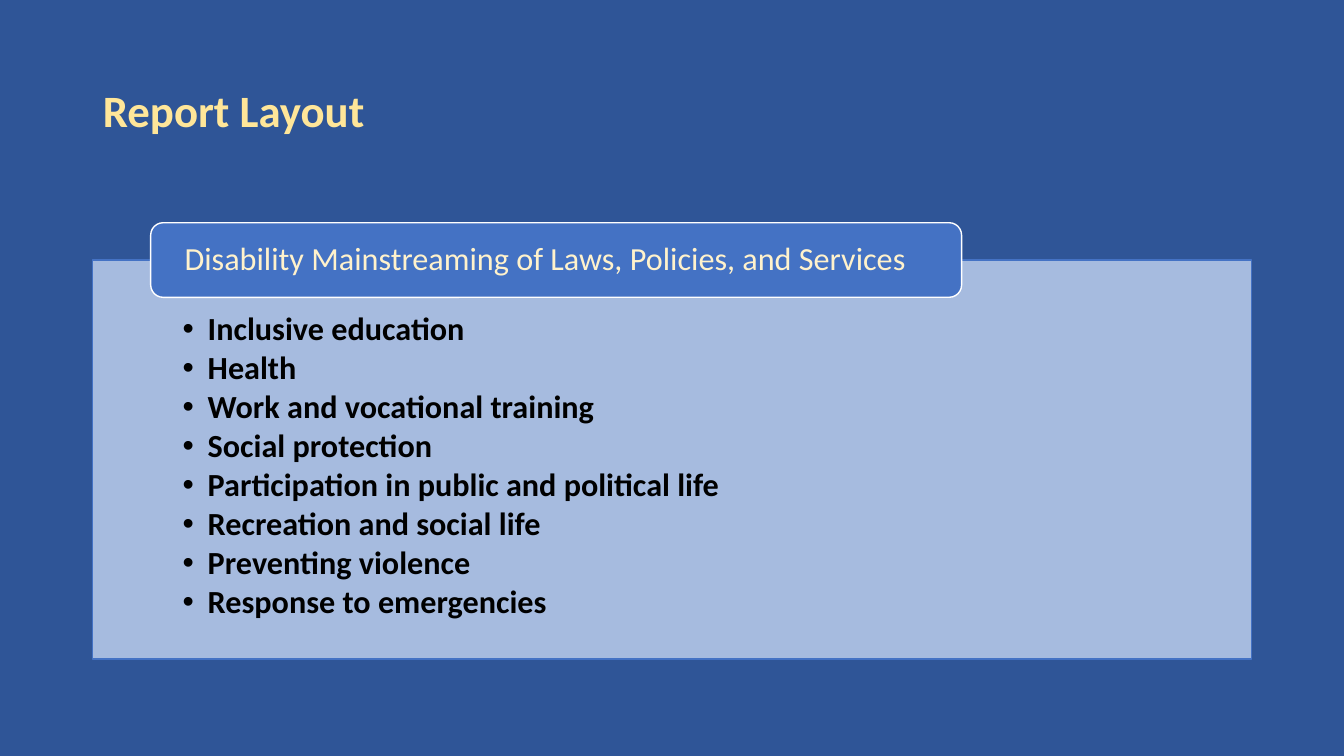
from lxml.etree import SubElement
from pptx import Presentation
from pptx.dml.color import RGBColor
from pptx.enum.shapes import MSO_SHAPE as Shape
from pptx.enum.text import MSO_ANCHOR as Anchor, MSO_AUTO_SIZE as AutoSize, PP_ALIGN as Align
from pptx.oxml.ns import qn
from pptx.util import Inches, Pt

NAVY = RGBColor(0x2F, 0x55, 0x97)
BLUE = RGBColor(0x44, 0x72, 0xC4)
PALE_BLUE = RGBColor(0xB4, 0xC7, 0xE7)
GOLD = RGBColor(0xFF, 0xE6, 0x99)
CREAM = RGBColor(0xFF, 0xF2, 0xCC)
WHITE = RGBColor(0xFF, 0xFF, 0xFF)
BLACK = RGBColor(0, 0, 0)

FONT = "Calibri"
WIDTH, HEIGHT = 13.33, 7.5
MARGIN = 0.92
CONTENT_WIDTH = WIDTH - 2 * MARGIN
PANEL_TOP, PANEL_HEIGHT = 2.58, 3.96
HEADING_HEIGHT = 0.74

HEADING = "Disability Mainstreaming of Laws, Policies, and Services"
TOPICS = [
    "Inclusive education",
    "Health",
    "Work and vocational training",
    "Social protection",
    "Participation in public and political life",
    "Recreation and social life",
    "Preventing violence",
    "Response to emergencies",
]


def place(shape, left, top, width, height):
    shape.left, shape.top = Inches(left), Inches(top)
    shape.width, shape.height = Inches(width), Inches(height)


def add_box(page, kind, area, fill, line, opacity=100):
    box = page.shapes.add_shape(kind, *map(Inches, area))
    box.shadow.inherit = False
    box.fill.solid()
    box.fill.fore_color.rgb = fill
    box.line.color.rgb = line
    box.line.width = Pt(1)
    if opacity < 100:
        color = box.fill._xPr.find(".//" + qn("a:srgbClr"))
        SubElement(color, qn("a:alpha"), val=str(opacity * 1000))
    return box


def set_frame(frame, anchor, left, top, right, bottom):
    frame.word_wrap = True
    frame.auto_size = AutoSize.NONE
    frame.vertical_anchor = anchor
    frame.margin_left, frame.margin_top = Inches(left), Inches(top)
    frame.margin_right, frame.margin_bottom = Inches(right), Inches(bottom)


def write(para, text, size, color, bold=False):
    para.alignment = Align.LEFT
    para.line_spacing = 0.9
    span = para.add_run()
    span.text = text
    span.font.name = FONT
    span.font.size = Pt(size)
    span.font.bold = bold
    span.font.color.rgb = color


def add_bullet(para, indent):
    para.space_after = Pt(3.1)
    props = para._p.get_or_add_pPr()
    props.set("marL", str(Inches(indent)))
    props.set("indent", str(-Inches(indent)))
    SubElement(props, qn("a:buFont"), typeface="Arial")
    SubElement(props, qn("a:buChar"), char="•")


def add_title(page, text):
    title = page.shapes.title
    place(title, MARGIN, 0.4, CONTENT_WIDTH, 1.45)
    set_frame(title.text_frame, Anchor.MIDDLE, 0.1, 0.05, 0.1, 0.05)
    write(title.text_frame.paragraphs[0], text, 32, GOLD, bold=True)


def add_topic_panel(page, topics):
    area = (MARGIN, PANEL_TOP, CONTENT_WIDTH, PANEL_HEIGHT)
    panel = add_box(page, Shape.RECTANGLE, area, PALE_BLUE, BLUE, opacity=90)
    frame = panel.text_frame
    set_frame(frame, Anchor.TOP, 0.89, 0.52, 0.89, 0.18)
    for index, topic in enumerate(topics):
        para = frame.add_paragraph() if index else frame.paragraphs[0]
        write(para, topic, 23, BLACK, bold=True)
        add_bullet(para, 0.25)


def add_heading(page, text):
    # The heading straddles the panel's top edge, 5% in and 70% as wide
    area = (MARGIN + 0.05 * CONTENT_WIDTH, PANEL_TOP - HEADING_HEIGHT / 2,
            0.7 * CONTENT_WIDTH, HEADING_HEIGHT)
    heading = add_box(page, Shape.ROUNDED_RECTANGLE, area, BLUE, WHITE)
    set_frame(heading.text_frame, Anchor.MIDDLE, 0.3, 0, 0.3, 0)
    write(heading.text_frame.paragraphs[0], text, 23, CREAM)


def main():
    deck = Presentation()
    deck.slide_width, deck.slide_height = Inches(WIDTH), Inches(HEIGHT)
    page = deck.slides.add_slide(deck.slide_layouts.get_by_name("Title Only"))
    page.background.fill.solid()
    page.background.fill.fore_color.rgb = NAVY

    add_title(page, "Report Layout")
    add_topic_panel(page, TOPICS)
    add_heading(page, HEADING)
    deck.save("out.pptx")


if __name__ == "__main__":
    main()
